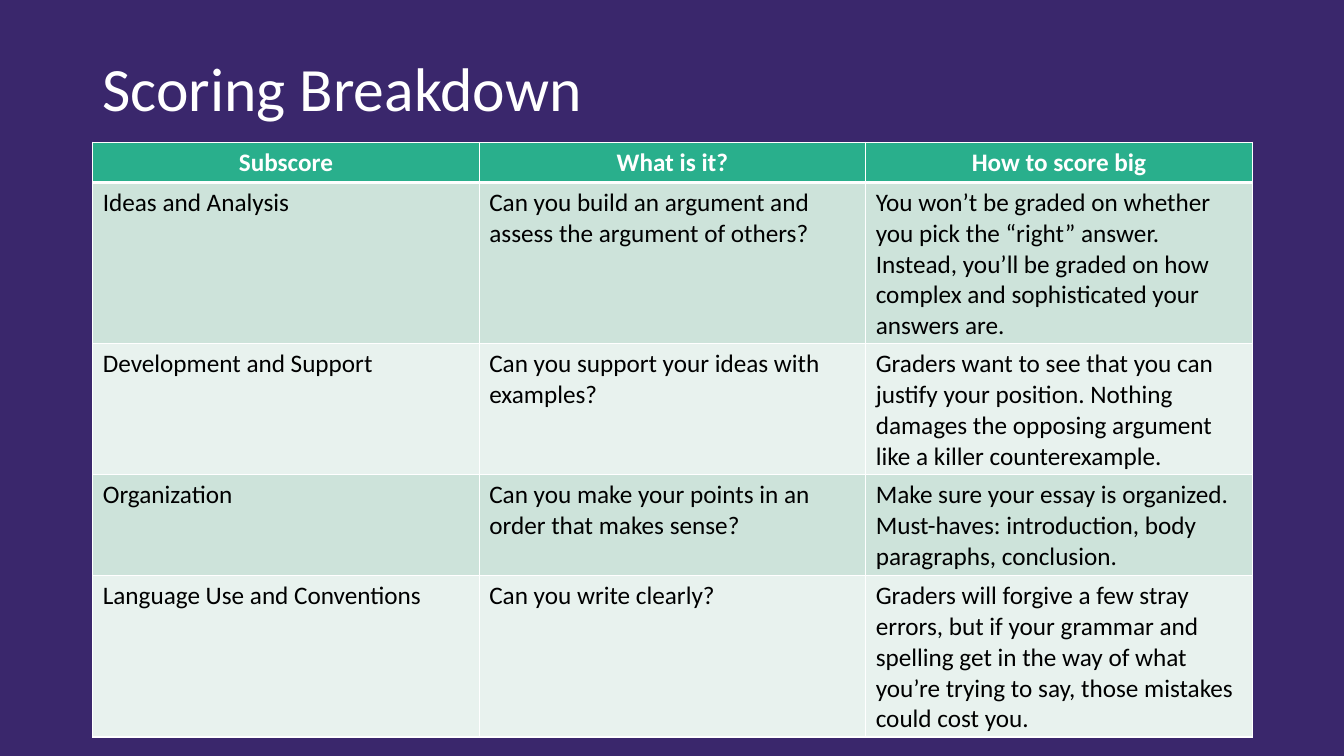
from lxml.etree import SubElement
from pptx import Presentation
from pptx.dml.color import RGBColor
from pptx.enum.text import MSO_ANCHOR, PP_ALIGN
from pptx.oxml.ns import qn
from pptx.util import Inches, Pt

TITLE = "Scoring Breakdown"
HEADERS = ("Subscore", "What is it?", "How to score big")
# Each row ends with the number of text lines in its tallest cell
ROWS = [
    ("Ideas and Analysis",
     "Can you build an argument and assess the argument of others?",
     "You won’t be graded on whether you pick the “right” answer. Instead, "
     "you’ll be graded on how complex and sophisticated your answers are.", 5),
    ("Development and Support",
     "Can you support your ideas with examples?",
     "Graders want to see that you can justify your position. Nothing damages "
     "the opposing argument like a killer counterexample.", 4),
    ("Organization",
     "Can you make your points in an order that makes sense?",
     "Make sure your essay is organized. Must-haves: introduction, body "
     "paragraphs, conclusion.", 3),
    ("Language Use and Conventions",
     "Can you write clearly?",
     "Graders will forgive a few stray errors, but if your grammar and spelling "
     "get in the way of what you’re trying to say, those mistakes could cost you.", 5),
]
COLORS = {"back": "3A276C", "white": "FFFFFF", "black": "000000",
          "header": "29AF8C", "odd": "CDE3DA", "even": "E8F2EE"}
FONT = "Calibri"
WIDTH, HEIGHT = 13.33, 7.5
LEFT, TABLE_W = 0.92, 11.5
TABLE_TOP = 1.41
PADDING, LINE_H = 0.1, 0.3


def rgb(name):
    return RGBColor.from_string(COLORS[name])


def format_run(r, size, color, bold=False):
    r.font.name = FONT
    r.font.size = Pt(size)
    r.font.bold = bold
    r.font.color.rgb = rgb(color)


def add_borders(cell, bottom):
    tcPr = cell._tc.get_or_add_tcPr()
    for side, points in (("L", 1), ("R", 1), ("T", 1), ("B", bottom)):
        ln = SubElement(tcPr, qn(f"a:ln{side}"), w=str(Pt(points)))
        fill = SubElement(ln, qn("a:solidFill"))
        SubElement(fill, qn("a:srgbClr"), val=COLORS["white"])


def add_title(slide):
    box = slide.shapes.add_textbox(Inches(LEFT), Inches(0.18),
                                   Inches(TABLE_W), Inches(1.45))
    tf = box.text_frame
    tf.word_wrap = True
    tf.vertical_anchor = MSO_ANCHOR.MIDDLE
    p = tf.paragraphs[0]
    p.text = TITLE
    p.line_spacing = 0.9
    format_run(p.runs[0], 44, "white")


def add_scores(slide):
    lines = [1] + [row[-1] for row in ROWS]
    heights = [Inches(PADDING + LINE_H * n) for n in lines]
    frame = slide.shapes.add_table(
        len(lines), len(HEADERS), Inches(LEFT), Inches(TABLE_TOP),
        Inches(TABLE_W), sum(heights))
    table = frame.table
    for i, texts in enumerate([HEADERS] + [row[:-1] for row in ROWS]):
        table.rows[i].height = heights[i]
        header = i == 0
        band = "header" if header else ("odd" if i % 2 else "even")
        for j, text in enumerate(texts):
            cell = table.cell(i, j)
            add_borders(cell, 3 if header else 1)
            cell.fill.solid()
            cell.fill.fore_color.rgb = rgb(band)
            cell.vertical_anchor = MSO_ANCHOR.MIDDLE if header else MSO_ANCHOR.TOP
            p = cell.text_frame.paragraphs[0]
            p.text = text
            p.alignment = PP_ALIGN.CENTER if header else PP_ALIGN.LEFT
            format_run(p.runs[0], 18, "white" if header else "black", header)


def main():
    prs = Presentation()
    prs.slide_width, prs.slide_height = Inches(WIDTH), Inches(HEIGHT)
    slide = prs.slides.add_slide(prs.slide_layouts[6])
    slide.background.fill.solid()
    slide.background.fill.fore_color.rgb = rgb("back")
    add_title(slide)
    add_scores(slide)
    prs.save("out.pptx")


if __name__ == "__main__":
    main()
